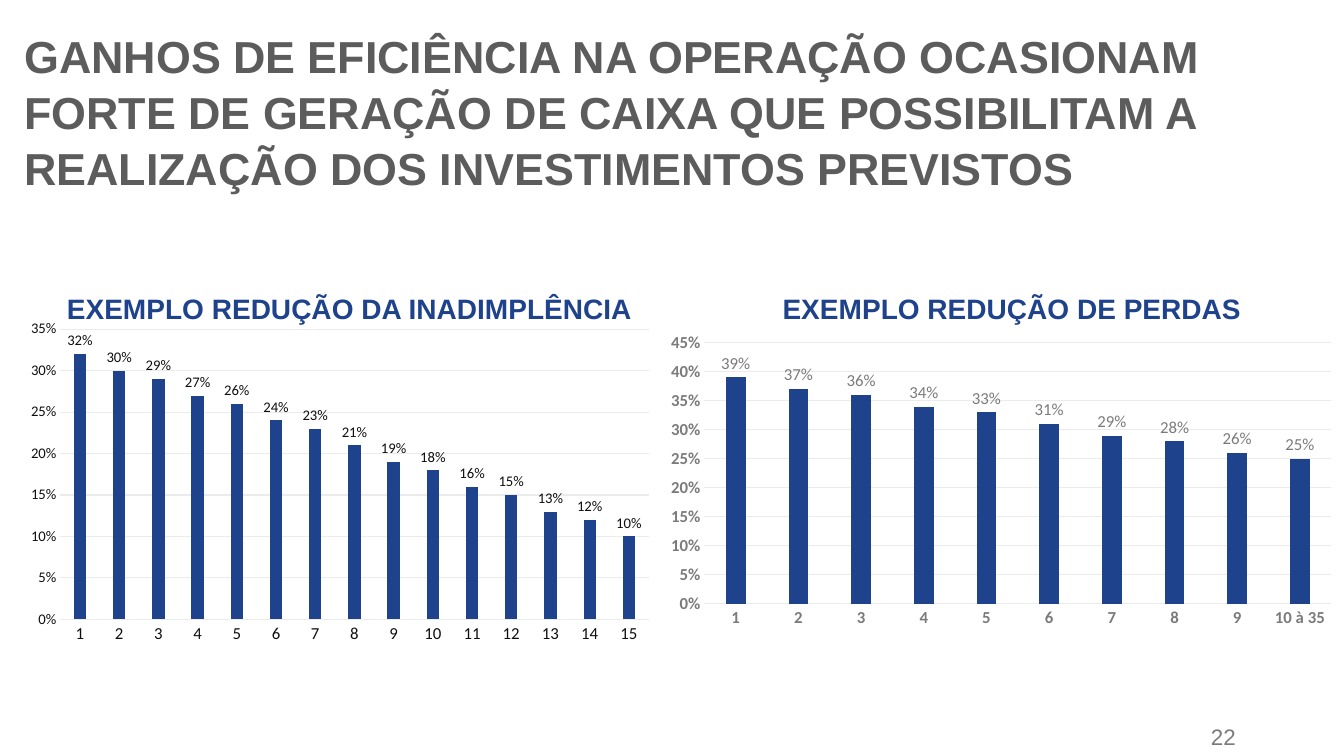
from dataclasses import dataclass

import pptx
import pptx.chart.data
import pptx.dml.color
import pptx.enum.chart
import pptx.enum.text
import pptx.util

Inches = pptx.util.Inches
Pt = pptx.util.Pt


@dataclass(frozen=True)
class Theme:
    text_font: str = "Arial"
    chart_font: str = "Calibri"
    title: str = "5C5C5C"
    accent: str = "1E428B"
    muted: str = "7B7B7B"
    dark: str = "0F0F0F"
    grid: str = "EBEBEB"
    title_size: float = 32
    heading_size: float = 20
    number_size: float = 16
    axis_size: float = 12
    small_size: float = 10.5


def color(value):
    return pptx.dml.color.RGBColor.from_string(value)


class SlideBuilder:
    def __init__(self, slide, theme):
        self.slide = slide
        self.theme = theme

    def style_font(self, font, name, size, value, bold=False):
        font.name = name
        font.size = Pt(size)
        font.color.rgb = color(value)
        font.bold = bold

    def fill_text(self, shape, text, size, value, bold, alignment, spacing, inset, anchor):
        frame = shape.text_frame
        frame.word_wrap = True
        frame.auto_size = pptx.enum.text.MSO_AUTO_SIZE.NONE
        frame.vertical_anchor = anchor
        frame.margin_left = frame.margin_right = Inches(inset)
        frame.margin_top = frame.margin_bottom = Inches(min(inset, 0.06))
        paragraph = frame.paragraphs[0]
        paragraph.text = text
        paragraph.alignment = alignment
        paragraph.line_spacing = spacing
        self.style_font(paragraph.font, self.theme.text_font, size, value, bold)

    def title(self, text, left, top, width, height):
        shape = self.slide.shapes.title
        shape.left, shape.top = Inches(left), Inches(top)
        shape.width, shape.height = Inches(width), Inches(height)
        self.fill_text(shape, text, self.theme.title_size, self.theme.title, True,
                       pptx.enum.text.PP_ALIGN.LEFT, 1.04, 0.06,
                       pptx.enum.text.MSO_ANCHOR.MIDDLE)

    def text_box(self, left, top, width, height):
        return self.slide.shapes.add_textbox(
            Inches(left), Inches(top), Inches(width), Inches(height))

    def heading(self, text, left, top, width, height):
        self.fill_text(self.text_box(left, top, width, height), text,
                       self.theme.heading_size, self.theme.accent, True,
                       pptx.enum.text.PP_ALIGN.CENTER, 1.07, 0.1,
                       pptx.enum.text.MSO_ANCHOR.TOP)

    def page_number(self, text, left, top, width, height):
        self.fill_text(self.text_box(left, top, width, height), text,
                       self.theme.number_size, self.theme.muted, False,
                       pptx.enum.text.PP_ALIGN.LEFT, 1.0, 0.05,
                       pptx.enum.text.MSO_ANCHOR.TOP)

    def column_chart(self, box, categories, values, maximum, value_size, text_color, bold):
        theme = self.theme
        data = pptx.chart.data.CategoryChartData(number_format="0%")
        data.categories = categories
        data.add_series("Series 1", values)
        chart = self.slide.shapes.add_chart(
            pptx.enum.chart.XL_CHART_TYPE.COLUMN_CLUSTERED,
            *[Inches(length) for length in box], data).chart
        chart.has_legend = False
        chart.has_title = False
        self.style_font(chart.font, theme.chart_font, 10, theme.muted)

        for axis, size in ((chart.category_axis, theme.axis_size),
                           (chart.value_axis, value_size)):
            axis.major_tick_mark = pptx.enum.chart.XL_TICK_MARK.NONE
            axis.minor_tick_mark = pptx.enum.chart.XL_TICK_MARK.NONE
            self.style_font(axis.tick_labels.font, theme.chart_font, size, text_color, bold)

        value_axis = chart.value_axis
        value_axis.minimum_scale = 0
        value_axis.maximum_scale = maximum
        value_axis.major_unit = 0.05
        value_axis.tick_labels.number_format = "0%"
        value_axis.tick_labels.number_format_is_linked = False
        value_axis.format.line.fill.background()
        value_axis.has_major_gridlines = True
        for line in (chart.category_axis.format.line, value_axis.major_gridlines.format.line):
            line.color.rgb = color(theme.grid)
            line.width = Pt(0.75)

        plot = chart.plots[0]
        plot.vary_by_categories = False
        plot.gap_width = 219
        plot.overlap = -27
        fill = plot.series[0].format.fill
        fill.solid()
        fill.fore_color.rgb = color(theme.accent)
        plot.has_data_labels = True
        labels = plot.data_labels
        labels.show_value = True
        labels.position = pptx.enum.chart.XL_LABEL_POSITION.OUTSIDE_END
        labels.number_format = "0%"
        labels.number_format_is_linked = False
        self.style_font(labels.font, theme.chart_font, value_size, text_color)


def main():
    presentation = pptx.Presentation()
    presentation.slide_width = Inches(13.33)
    presentation.slide_height = Inches(7.5)
    theme = Theme()
    builder = SlideBuilder(
        presentation.slides.add_slide(presentation.slide_layouts[5]), theme)

    builder.title(
        "GANHOS DE EFICIÊNCIA NA OPERAÇÃO OCASIONAM FORTE DE GERAÇÃO DE CAIXA "
        "QUE POSSIBILITAM A REALIZAÇÃO DOS INVESTIMENTOS PREVISTOS",
        0.18, 0.23, 12.97, 1.73)
    builder.column_chart(
        (0.18, 3.11, 6.38, 3.34),
        [str(number) for number in range(1, 16)],
        [0.32, 0.30, 0.29, 0.27, 0.26, 0.24, 0.23, 0.21,
         0.19, 0.18, 0.16, 0.15, 0.13, 0.12, 0.10],
        0.35, theme.small_size, theme.dark, False)
    builder.column_chart(
        (6.52, 3.24, 6.82, 3.05),
        [str(number) for number in range(1, 10)] + ["10 à 35"],
        [0.39, 0.37, 0.36, 0.34, 0.33, 0.31, 0.29, 0.28, 0.26, 0.25],
        0.45, theme.axis_size, theme.muted, True)
    builder.heading("EXEMPLO REDUÇÃO DE PERDAS", 7.15, 2.81, 5.77, 0.46)
    builder.heading("EXEMPLO REDUÇÃO DA INADIMPLÊNCIA", 0.41, 2.81, 6.11, 0.46)
    builder.page_number("22", 11.96, 7.12, 1.38, 0.37)
    presentation.save("out.pptx")


if __name__ == "__main__":
    main()
